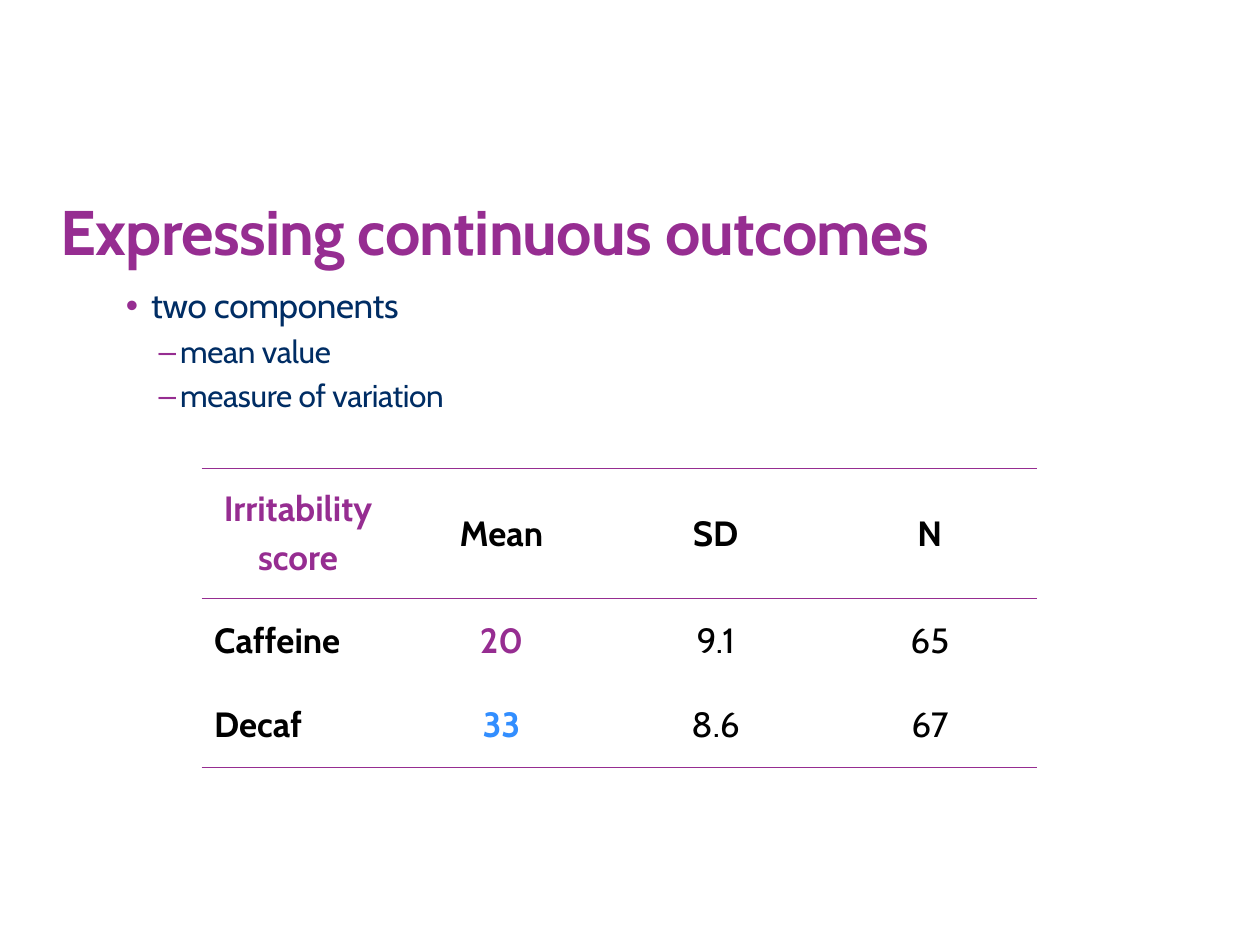
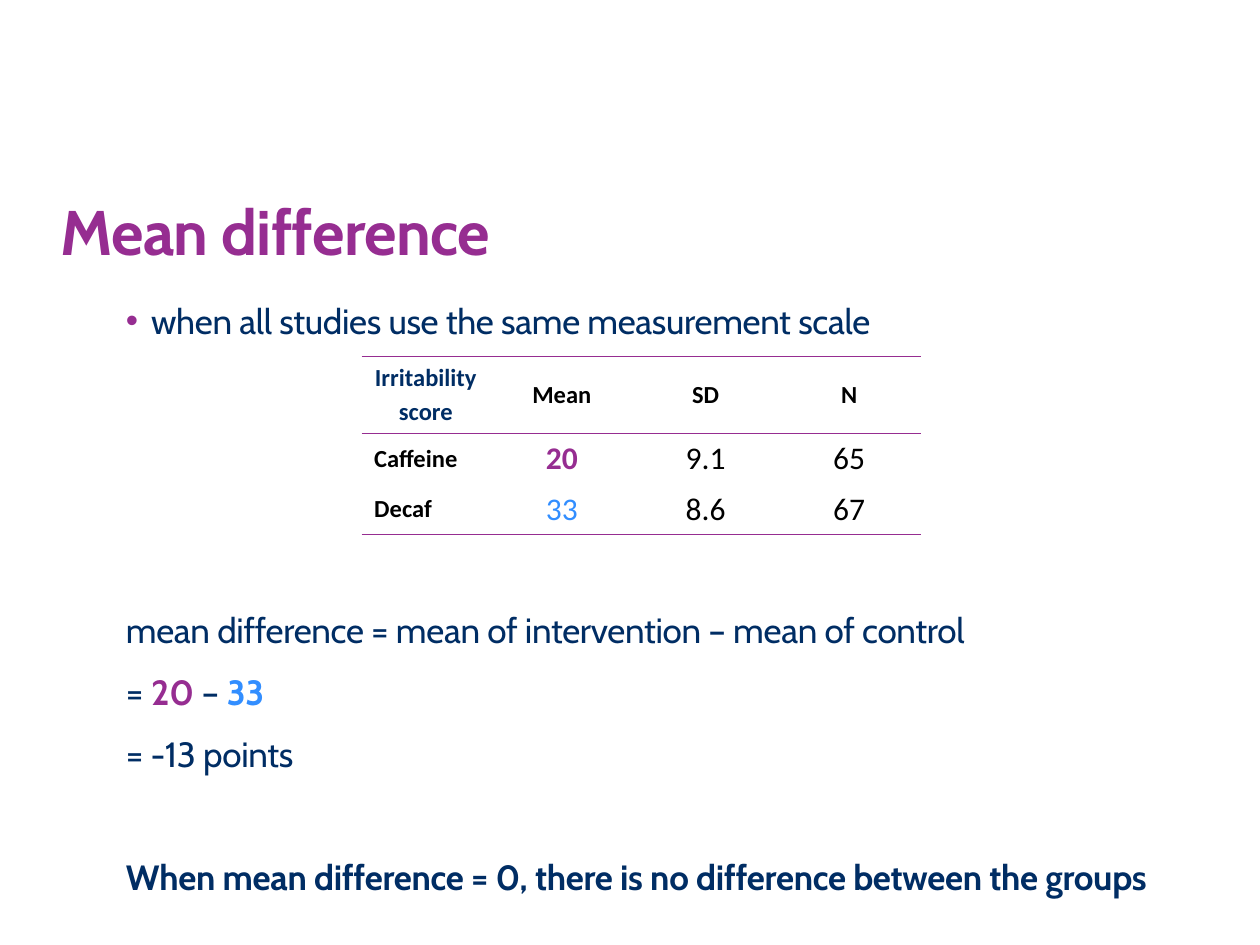
import pptx
import pptx.util
import pptx.dml.color
import pptx.enum.text
import pptx.oxml.ns
from lxml import etree

Inches, Pt = pptx.util.Inches, pptx.util.Pt
ALIGN, ANCHOR = pptx.enum.text.PP_ALIGN, pptx.enum.text.MSO_ANCHOR

# Shared style
PURPLE, NAVY, BLUE, BLACK = "962D91", "002D64", "328EFF", "000000"
FONT = "Cabin"
BULLETS = {"•": (0.2, -0.2), "–": (0.43, -0.17)}  # left indent, first line
BODY_GAP = 11.3
BODY_PITCH = 35.3  # one body line with its gap, in points


def rgb(hex_color):
    return pptx.dml.color.RGBColor.from_string(hex_color)


def sub(parent, tag, **attrs):
    return etree.SubElement(parent, pptx.oxml.ns.qn(tag), **attrs)


def add_run(p, text, size, color, bold=False, font=FONT, spacing=0):
    r = p.add_run()
    r.text = text
    r.font.size, r.font.bold, r.font.name = Pt(size), bold, font
    r.font.color.rgb = rgb(color)
    if spacing:
        r._r.get_or_add_rPr().set("spc", str(round(spacing * 100)))


def add_box(s, left, top, width, height, anchor=ANCHOR.TOP):
    tf = s.shapes.add_textbox(Inches(left), Inches(top), Inches(width), Inches(height)).text_frame
    tf.word_wrap = True
    tf.vertical_anchor = anchor
    tf.margin_left = tf.margin_top = tf.margin_right = tf.margin_bottom = 0
    return tf


def add_title(s, text):
    tf = add_box(s, 0.48, 1.44, 8.52, 0.69, ANCHOR.BOTTOM)
    add_run(tf.paragraphs[0], text, 36, PURPLE, True, spacing=-0.4)


def add_line(tf, runs, size=20, gap=BODY_GAP, bullet=None, line_spacing=None):
    """Add a body paragraph; runs are (text, color, bold)."""
    first = not tf.paragraphs[0].runs
    p = tf.paragraphs[0] if first else tf.add_paragraph()
    if bullet:
        pPr = p._p.get_or_add_pPr()
        left, indent = BULLETS[bullet]
        pPr.set("marL", str(Inches(left)))
        pPr.set("indent", str(Inches(indent)))
        sub(sub(pPr, "a:buClr"), "a:srgbClr", val=PURPLE)
        sub(pPr, "a:buFont", typeface="Arial")
        sub(pPr, "a:buChar", char=bullet)
    if line_spacing:
        p.line_spacing = line_spacing
    if not first:
        p.space_before = Pt(gap)
    for text, color, bold in runs:
        add_run(p, text, size, color, bold, spacing=-0.2)


def set_borders(cell, top, bottom):
    """Rule the top and bottom as asked and clear the other sides."""
    tcPr = cell._tc.get_or_add_tcPr()
    sides = {"a:lnL": False, "a:lnR": False, "a:lnT": top, "a:lnB": bottom}
    for i, (tag, ruled) in enumerate(sides.items()):
        ln = sub(tcPr, tag, w=str(Pt(1)))
        if ruled:
            sub(sub(ln, "a:solidFill"), "a:srgbClr", val=PURPLE)
        else:
            sub(ln, "a:noFill")
        tcPr.insert(i, ln)


def add_score_table(s, left, top, cols, rows, font, label_size, value_size,
                    corner_color, decaf_bold):
    data = [["Irritability\nscore", "Mean", "SD", "N"],
            ["Caffeine", "20", "9.1", "65"],
            ["Decaf", "33", "8.6", "67"]]
    means = {1: (PURPLE, True), 2: (BLUE, decaf_bold)}
    frame = s.shapes.add_table(len(rows), len(cols), Inches(left), Inches(top),
                               Inches(sum(cols)), Inches(sum(rows)))
    table = frame.table
    table.first_row = table.horz_banding = False
    for column, width in zip(table.columns, cols):
        column.width = Inches(width)
    for row, height in zip(table.rows, rows):
        row.height = Inches(height)

    for i, values in enumerate(data):
        for j, value in enumerate(values):
            label = i == 0 or j == 0
            size = label_size if label else value_size
            color, bold = BLACK, label
            if i == j == 0:
                color = corner_color
            elif i and j == 1:
                color, bold = means[i]
            cell = table.cell(i, j)
            cell.vertical_anchor = ANCHOR.MIDDLE
            cell.fill.background()
            set_borders(cell, top=i < 2, bottom=i != 1)
            tf = cell.text_frame
            for k, text in enumerate(value.split("\n")):
                p = tf.add_paragraph() if k else tf.paragraphs[0]
                p.alignment = ALIGN.LEFT if i and j == 0 else ALIGN.CENTER
                if k:
                    p.space_before = Pt(size * 0.2)
                add_run(p, text, size, color, bold, font)


def build_outcomes(s):
    add_title(s, "Expressing continuous outcomes")
    tf = add_box(s, 1, 2.29, 9, 4.52)
    add_line(tf, [("two components", NAVY, False)], bullet="•", line_spacing=0.9)
    for text in ("mean value", "measure of variation"):
        add_line(tf, [(text, NAVY, False)], 18, 5.7, "–", 0.9)
    add_score_table(s, 1.6, 3.72, [1.53] + [1.7] * 3, [1.03, 0.67, 0.67],
                    FONT, 20, 20, PURPLE, True)


def build_difference(s):
    add_title(s, "Mean difference")
    tf = add_box(s, 1, 2.38, 9, 4.28)
    add_line(tf, [("when all studies use the same measurement scale", NAVY, False)], bullet="•")
    # Leave room for the table above the calculation
    add_line(tf, [("mean difference = mean of intervention – mean of control", NAVY, False)],
             gap=BODY_GAP + 4 * BODY_PITCH)
    add_line(tf, [("= ", NAVY, False), ("20", PURPLE, True),
                  (" – ", NAVY, False), ("33", BLUE, True)])
    add_line(tf, [("= -13 points", NAVY, False)])
    add_line(tf, [("When mean difference = 0, there is no difference between the groups",
                   NAVY, True)], gap=BODY_GAP + BODY_PITCH)
    add_score_table(s, 2.87, 2.83, [1.02] + [1.14] * 3, [0.61, 0.4, 0.4],
                    "Calibri", 14, 18, NAVY, False)


def main():
    prs = pptx.Presentation()
    prs.slide_width, prs.slide_height = Inches(10), Inches(7.5)
    for build in (build_outcomes, build_difference):
        build(prs.slides.add_slide(prs.slide_layouts[6]))
    prs.save("out.pptx")


if __name__ == "__main__":
    main()
